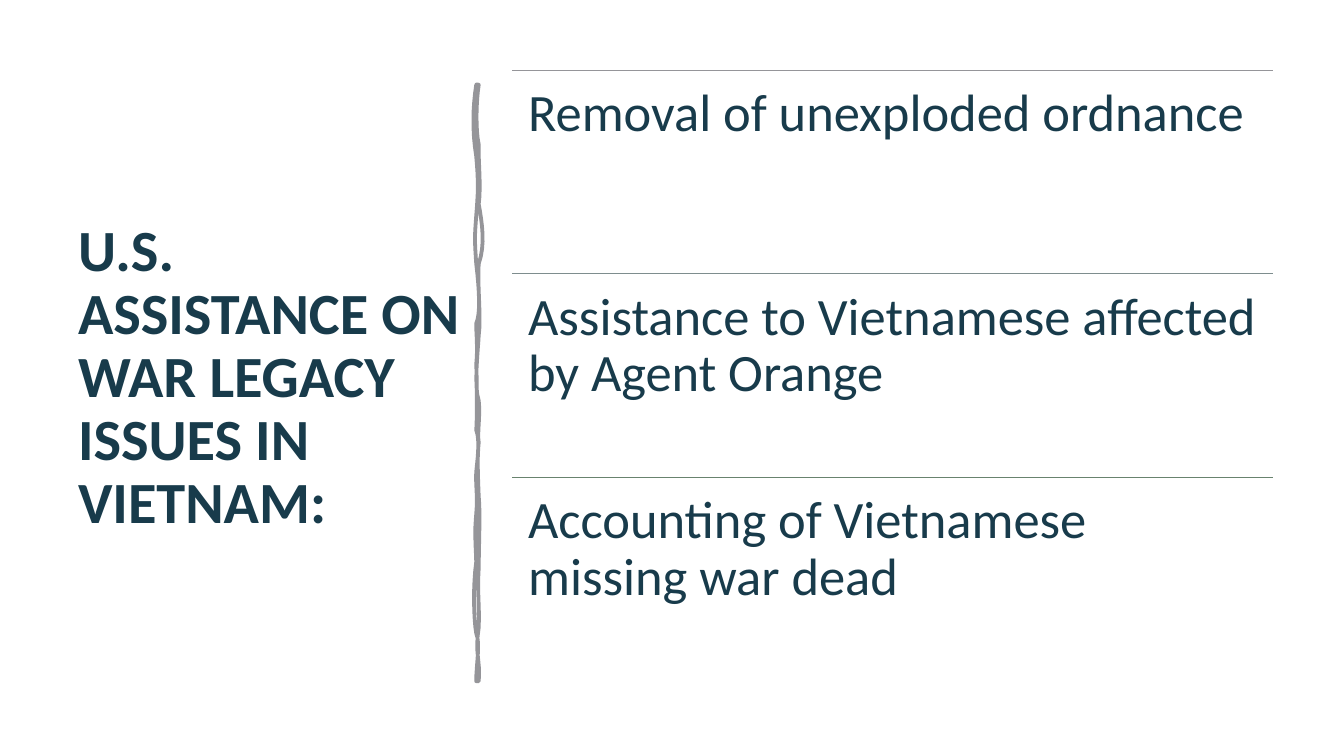
from dataclasses import dataclass

from lxml import etree
from pptx import Presentation
from pptx import util as u
from pptx.dml.color import RGBColor
from pptx.enum import shapes, text
from pptx.oxml.ns import qn


@dataclass(frozen=True)
class Theme:
    font: str = "Calibri"
    ink: str = "183B4B"
    paper: str = "FFFFFF"
    brush: str = "959599"
    rules: tuple = ("959599", "7E8D8E", "68836E")
    title: float = 50
    body: float = 45
    thin: float = 1
    thick: float = 3.25


THEME = Theme()
TITLE = "U.S. ASSISTANCE ON WAR LEGACY ISSUES IN VIETNAM:"
ITEMS = (
    "Removal of unexploded ordnance",
    "Assistance to Vietnamese affected by Agent Orange",
    "Accounting of Vietnamese missing war dead",
)
LEFT, TOP, WIDTH, PITCH = 15.49, 2.13, 23.01, 6.15

UNIT = 0.0254
START = (570, 101)
CURVES = (
    (567, 119, 566, 155, 570, 172),
    (569, 185, 573, 222, 570, 243),
    (574, 266, 578, 291, 570, 314),
    (568, 334, 573, 380, 570, 399),
    (569, 419, 564, 460, 570, 477),
    (572, 496, 568, 515, 570, 527),
    (568, 543, 569, 568, 570, 591),
    (572, 614, 570, 646, 570, 676),
    (568, 707, 571, 717, 570, 747),
    (565, 779, 572, 784, 570, 811),
    (569, 811, 568, 811, 567, 811),
    (567, 791, 572, 766, 567, 754),
    (564, 737, 563, 697, 567, 669),
    (566, 640, 565, 635, 567, 612),
    (569, 589, 566, 576, 567, 562),
    (568, 550, 572, 524, 567, 512),
    (568, 501, 568, 454, 567, 434),
    (569, 413, 567, 400, 567, 385),
    (572, 374, 571, 348, 567, 314),
    (565, 285, 565, 283, 567, 257),
    (569, 231, 570, 219, 567, 186),
    (562, 156, 563, 126, 567, 101),
    (568, 100, 569, 101, 570, 101),
)


def tint(code):
    return RGBColor.from_string(code)


def apply(target, values):
    for name, value in values.items():
        setattr(target, name, value)


def stroke(shape, color, width):
    shape.line.color.rgb = tint(color)
    shape.line.width = u.Pt(width)


def write(slide, words, box, size, inset, anchor, bold=False):
    frame = slide.shapes.add_textbox(*map(u.Cm, box)).text_frame
    sides = ("margin_left", "margin_right", "margin_top", "margin_bottom")
    apply(frame, {"word_wrap": True, "vertical_anchor": anchor})
    apply(frame, dict(zip(sides, map(u.Cm, inset))))
    para = frame.paragraphs[0]
    para.line_spacing = 0.9
    run = para.add_run()
    run.text = words
    apply(run.font, {"name": THEME.font, "size": u.Pt(size), "bold": bold})
    run.font.color.rgb = tint(THEME.ink)


def rule(slide, top, color):
    ends = map(u.Cm, (LEFT, top, LEFT + WIDTH, top))
    line = slide.shapes.add_connector(shapes.MSO_CONNECTOR.STRAIGHT, *ends)
    stroke(line, color, THEME.thin)
    etree.SubElement(line._element.spPr, qn("a:effectLst"))


def bend(start, curve, steps=8):
    nodes = (start, curve[:2], curve[2:4], curve[4:])
    for step in range(1, steps + 1):
        t = step / steps
        parts = ((1 - t) ** 3, 3 * t * (1 - t) ** 2, 3 * t * t * (1 - t), t ** 3)
        yield tuple(
            u.Cm(UNIT * sum(p * node[axis] for p, node in zip(parts, nodes)))
            for axis in (0, 1)
        )


def brush(slide):
    pen = slide.shapes.build_freeform(*(u.Cm(UNIT * n) for n in START))
    start = START
    for curve in CURVES:
        pen.add_line_segments(list(bend(start, curve)), close=False)
        start = curve[4:]
    pen.add_line_segments([], close=True)
    shape = pen.convert_to_shape()
    shape.shadow.inherit = False
    shape.fill.background()
    stroke(shape, THEME.brush, THEME.thick)


def main():
    deck = Presentation()
    apply(deck, {"slide_width": u.Cm(40.64), "slide_height": u.Cm(22.86)})
    slide = deck.slides.add_slide(deck.slide_layouts[6])
    back = slide.background.fill
    back.solid()
    back.fore_color.rgb = tint(THEME.paper)

    anchor = text.MSO_ANCHOR
    write(slide, TITLE, (2.11, TOP, 12.17, 18.62), THEME.title,
          (0.25, 0.25, 0.13, 0.13), anchor.MIDDLE, bold=True)
    brush(slide)
    for row, (item, color) in enumerate(zip(ITEMS, THEME.rules)):
        top = TOP + row * PITCH
        rule(slide, top, color)
        write(slide, item, (LEFT, top, WIDTH, PITCH), THEME.body,
              (0.48,) * 4, anchor.TOP)
    deck.save("out.pptx")


if __name__ == "__main__":
    main()
